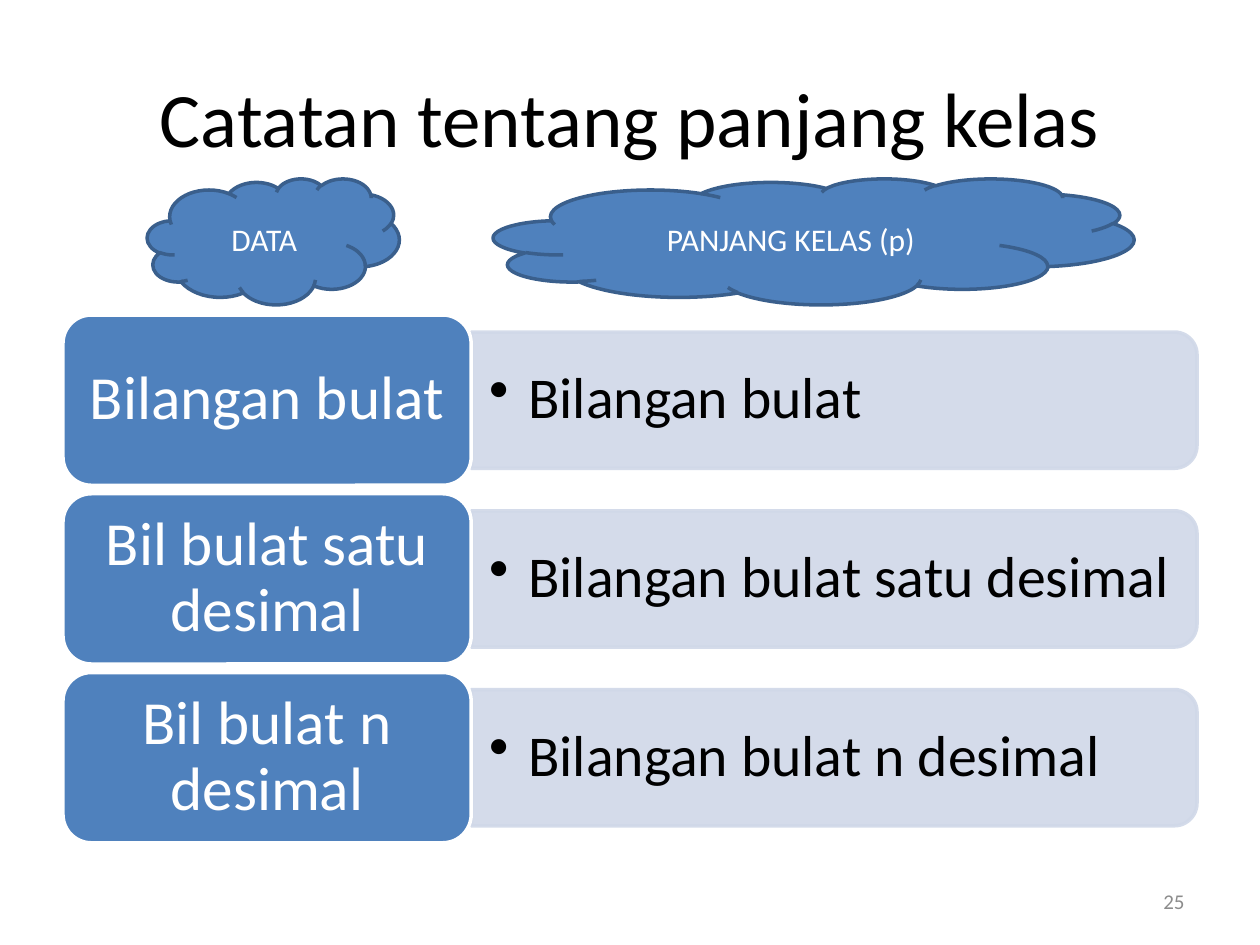
from lxml import etree
from pptx import Presentation
from pptx.dml.color import RGBColor
from pptx.enum import shapes, text
from pptx.oxml.ns import qn
from pptx.util import Cm, Pt

BLUE, DARK_BLUE, PALE_BLUE = "4F81BD", "3A5F8C", "D0D8E8"
BLACK, WHITE, GREY = "000000", "FFFFFF", "8C8C8C"
CENTER, RIGHT, LEFT = text.PP_ALIGN.CENTER, text.PP_ALIGN.RIGHT, text.PP_ALIGN.LEFT
INSETS = (0.25, 0.13)

ROWS = [
    ("Bilangan bulat", "Bilangan bulat"),
    ("Bil bulat satu desimal", "Bilangan bulat satu desimal"),
    ("Bil bulat n desimal", "Bilangan bulat n desimal"),
]


def color(value):
    return RGBColor.from_string(value)


def set_all(target, values):
    for name, value in values.items():
        setattr(target, name, value)


def add_block(page, preset, box, fill, line):
    block = page.shapes.add_shape(preset, *map(Cm, box))
    block.shadow.inherit = False
    block.fill.solid()
    block.fill.fore_color.rgb = color(fill)
    block.line.color.rgb = color(line)
    block.line.width = Pt(2)
    return block


def write(shape, words, size, ink, align, insets=INSETS, spacing=1.0, bullet=False):
    frame = shape.text_frame
    side, edge = map(Cm, insets)
    set_all(frame, {
        "word_wrap": True, "vertical_anchor": text.MSO_ANCHOR.MIDDLE,
        "margin_left": side, "margin_right": side,
        "margin_top": edge, "margin_bottom": edge,
    })
    para = frame.paragraphs[0]
    set_all(para, {"alignment": align, "line_spacing": spacing})
    if bullet:
        para.level = 1
        properties = para._p.get_or_add_pPr()
        properties.set("marL", str(Cm(0.79)))
        properties.set("indent", str(-Cm(0.79)))
        etree.SubElement(properties, qn("a:buChar")).set("char", "•")
    span = para.add_run()
    span.text = words
    set_all(span.font, {"name": "Calibri", "size": Pt(size)})
    span.font.color.rgb = color(ink)


def add_words(page, box, *args, **options):
    write(page.shapes.add_textbox(*map(Cm, box)), *args, **options)


def add_cloud(page, box, words):
    cloud = add_block(page, shapes.MSO_SHAPE.CLOUD, box, BLUE, DARK_BLUE)
    write(cloud, words, 18, WHITE, CENTER)


def add_bar(page, box, words):
    left, top, width, height = box
    shift = (width - height) / 2
    upright = (left + shift, top - shift, height, width)
    bar = add_block(page, shapes.MSO_SHAPE.ROUND_2_SAME_RECTANGLE, upright, PALE_BLUE, PALE_BLUE)
    bar.rotation = 90
    for tint in bar._element.spPr.iter(qn("a:srgbClr")):
        etree.SubElement(tint, qn("a:alpha")).set("val", "90000")
    add_words(page, (left, top + 0.13, width - 0.13, height - 0.26), words, 33, BLACK, LEFT,
              insets=(0.36, 0.18), spacing=0.9, bullet=True)


def add_row(page, box, label, detail):
    left, top, width, height = box
    label_width = width * 0.36
    add_bar(page, (left + label_width, top + height * 0.1, width - label_width, height * 0.8), detail)
    tile = add_block(page, shapes.MSO_SHAPE.ROUNDED_RECTANGLE, (left, top, label_width, height), BLUE, WHITE)
    write(tile, label, 35, WHITE, CENTER, insets=(0.37, 0.18), spacing=0.9)


def add_rows(page, box, rows):
    left, top, width, height = box
    gap = 0.17
    row_height = (height - gap * (len(rows) - 1)) / len(rows)
    for index, (label, detail) in enumerate(rows):
        row_top = top + index * (row_height + gap)
        add_row(page, (left, row_top, width, row_height), label, detail)


def main():
    deck = Presentation()
    deck.slide_width, deck.slide_height = Cm(25.4), Cm(19.05)
    page = deck.slides.add_slide(deck.slide_layouts[6])
    add_words(page, (18.2, 17.66, 5.93, 1.01), "25", 12, GREY, RIGHT)
    add_words(page, (1.27, 0.76, 22.86, 3.18), "Catatan tentang panjang kelas", 44, BLACK, CENTER)
    add_rows(page, (1.27, 6.35, 22.86, 10.64), ROWS)
    add_cloud(page, (2.97, 3.6, 5.08, 2.54), "DATA")
    add_cloud(page, (9.95, 3.6, 12.91, 2.54), "PANJANG KELAS (p)")
    deck.save("out.pptx")


if __name__ == "__main__":
    main()
